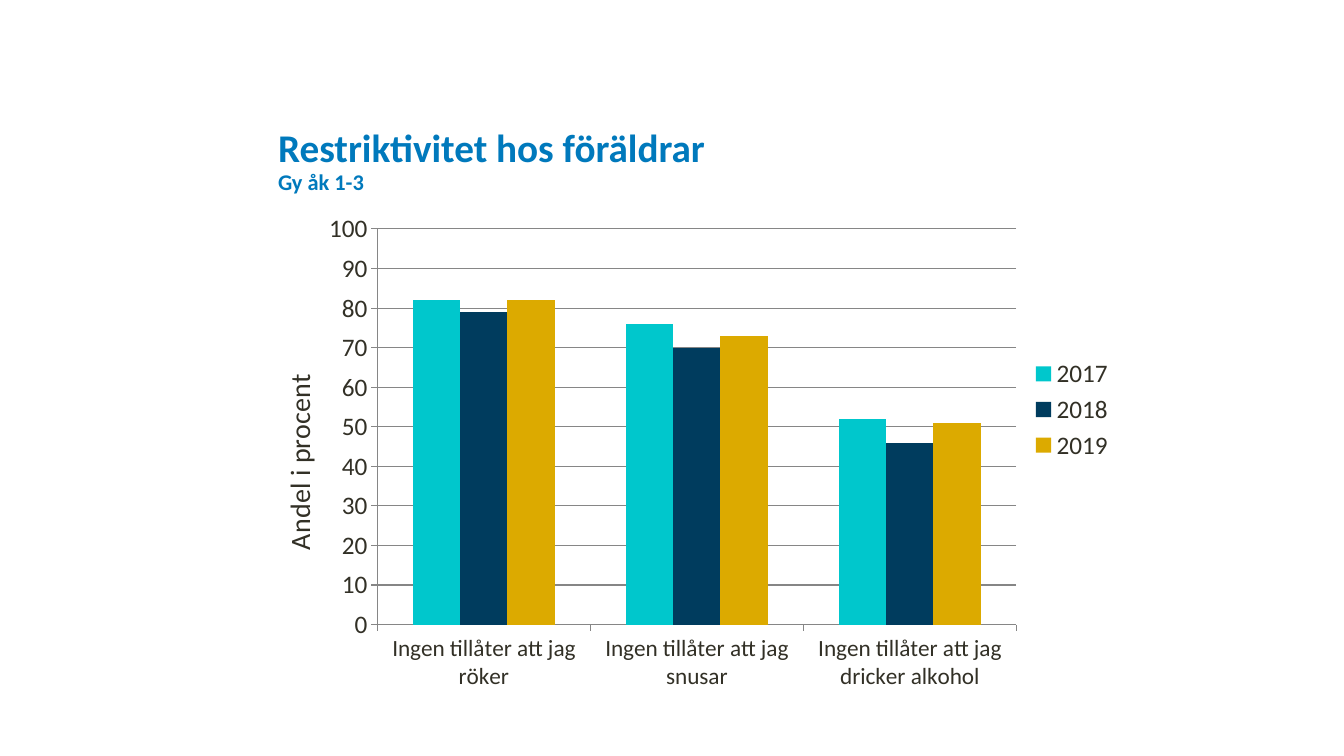
"""Build a slide with a column chart of how restrictive parents are."""
from lxml import etree
from pptx import Presentation
from pptx.chart.data import CategoryChartData
from pptx.dml.color import RGBColor
from pptx.enum.chart import XL_CHART_TYPE, XL_LEGEND_POSITION, XL_TICK_MARK
from pptx.enum.text import MSO_ANCHOR
from pptx.oxml.ns import qn
from pptx.util import Cm, Pt

COLUMNS = XL_CHART_TYPE.COLUMN_CLUSTERED
CORNER = XL_LEGEND_POSITION.CORNER
OUTSIDE, NO_TICK = XL_TICK_MARK.OUTSIDE, XL_TICK_MARK.NONE
BOTTOM = MSO_ANCHOR.BOTTOM
FONT = "Calibri"
BLUE = RGBColor(0x00, 0x79, 0xBC)
INK = RGBColor(0x32, 0x30, 0x26)
GREY = RGBColor(0x86, 0x86, 0x86)
TEAL = RGBColor(0x00, 0xC7, 0xCC)
NAVY = RGBColor(0x00, 0x3C, 0x5E)
GOLD = RGBColor(0xDC, 0xAA, 0x00)

TITLE = [("Restriktivitet hos föräldrar", 28), ("Gy åk 1-3", 16)]
AXIS_TITLE = "Andel i procent"
CATEGORIES = [
    "Ingen tillåter att jag röker",
    "Ingen tillåter att jag snusar",
    "Ingen tillåter att jag dricker alkohol",
]
SERIES = [
    ("2017", (82, 76, 52), TEAL),
    ("2018", (79, 70, 46), NAVY),
    ("2019", (82, 73, 51), GOLD),
]
PLOT_LAYOUT = {"layoutTarget": "inner", "xMode": "edge", "yMode": "edge",
               "x": 0.181, "y": 0.056, "w": 0.689, "h": 0.776}
LEGEND_LAYOUT = {"xMode": "edge", "yMode": "edge",
                 "x": 0.88, "y": 0.3, "w": 0.1, "h": 0.22}
AXIS_TITLE_LAYOUT = {"xMode": "edge", "yMode": "edge", "x": 0.07, "y": 0.33}


def style_font(font, size, color=INK, bold=False):
    font.name, font.size, font.bold = FONT, Pt(size), bold
    font.color.rgb = color


def place(element, index, settings):
    for old in element.findall(qn("c:layout")):
        element.remove(old)
    layout = etree.Element(qn("c:layout"))
    manual = etree.SubElement(layout, qn("c:manualLayout"))
    for key, value in settings.items():
        etree.SubElement(manual, qn("c:" + key)).set("val", str(value))
    element.insert(index, layout)


def add_title(s):
    tf = s.shapes.add_textbox(Cm(6.76), Cm(2.31), Cm(21.89), Cm(2.74)).text_frame
    tf.word_wrap = True
    tf.vertical_anchor = BOTTOM
    p = tf.paragraphs[0]
    p.line_spacing = 0.9
    for i, (text, size) in enumerate(TITLE):
        if i:
            p.add_line_break()
        r = p.add_run()
        r.text = text
        style_font(r.font, size, BLUE, True)


def add_chart(s):
    data = CategoryChartData()
    data.categories = CATEGORIES
    for name, values, _ in SERIES:
        data.add_series(name, values)
    chart = s.shapes.add_chart(
        COLUMNS, Cm(5.28), Cm(5.05), Cm(23.37), Cm(12.85), data).chart
    chart.has_title = False
    style_font(chart.font, 18)

    plot = chart.plots[0]
    plot.gap_width, plot.overlap = 150, 0
    plot.vary_by_categories = False
    for series, (_, _, color) in zip(plot.series, SERIES):
        series.format.fill.solid()
        series.format.fill.fore_color.rgb = color
    place(chart._chartSpace.chart.plotArea, 0, PLOT_LAYOUT)

    value_axis = chart.value_axis
    value_axis.minimum_scale, value_axis.maximum_scale = 0, 100
    value_axis.major_unit = 10
    value_axis.has_major_gridlines = True
    for axis, size in ((chart.category_axis, 16.6), (value_axis, 18)):
        axis.major_tick_mark, axis.minor_tick_mark = OUTSIDE, NO_TICK
        style_font(axis.tick_labels.font, size)
    for part in (chart.category_axis, value_axis, value_axis.major_gridlines):
        part.format.line.color.rgb = GREY
        part.format.line.width = Pt(0.75)

    title = value_axis.axis_title
    p = title.text_frame.paragraphs[0]
    p.text = AXIS_TITLE
    style_font(p.font, 20)
    place(title._element, 1, AXIS_TITLE_LAYOUT)

    chart.has_legend = True
    legend = chart.legend
    legend.position = CORNER
    legend.include_in_layout = False
    style_font(legend.font, 18)
    place(legend._element, 1, LEGEND_LAYOUT)


def main():
    prs = Presentation()
    prs.slide_width, prs.slide_height = Cm(33.87), Cm(19.05)
    s = prs.slides.add_slide(prs.slide_layouts[6])
    add_title(s)
    add_chart(s)
    prs.save("out.pptx")


if __name__ == "__main__":
    main()
